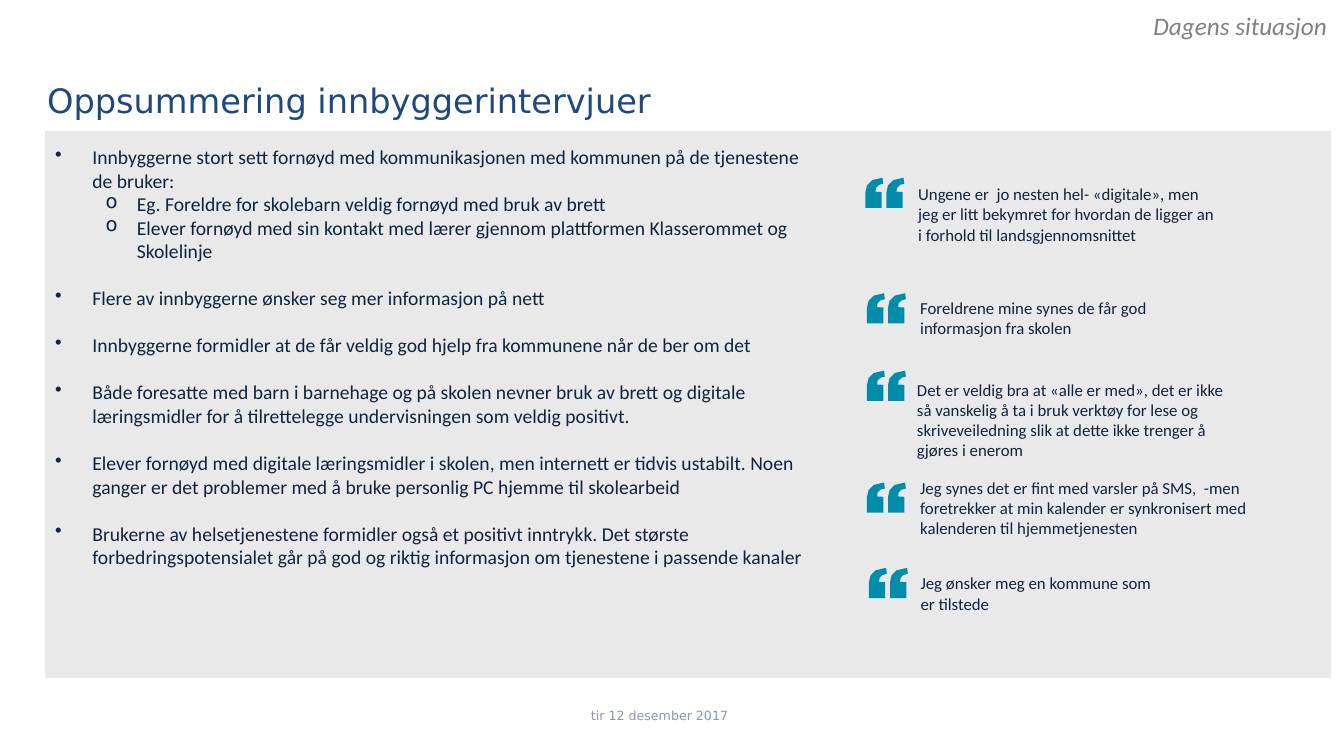
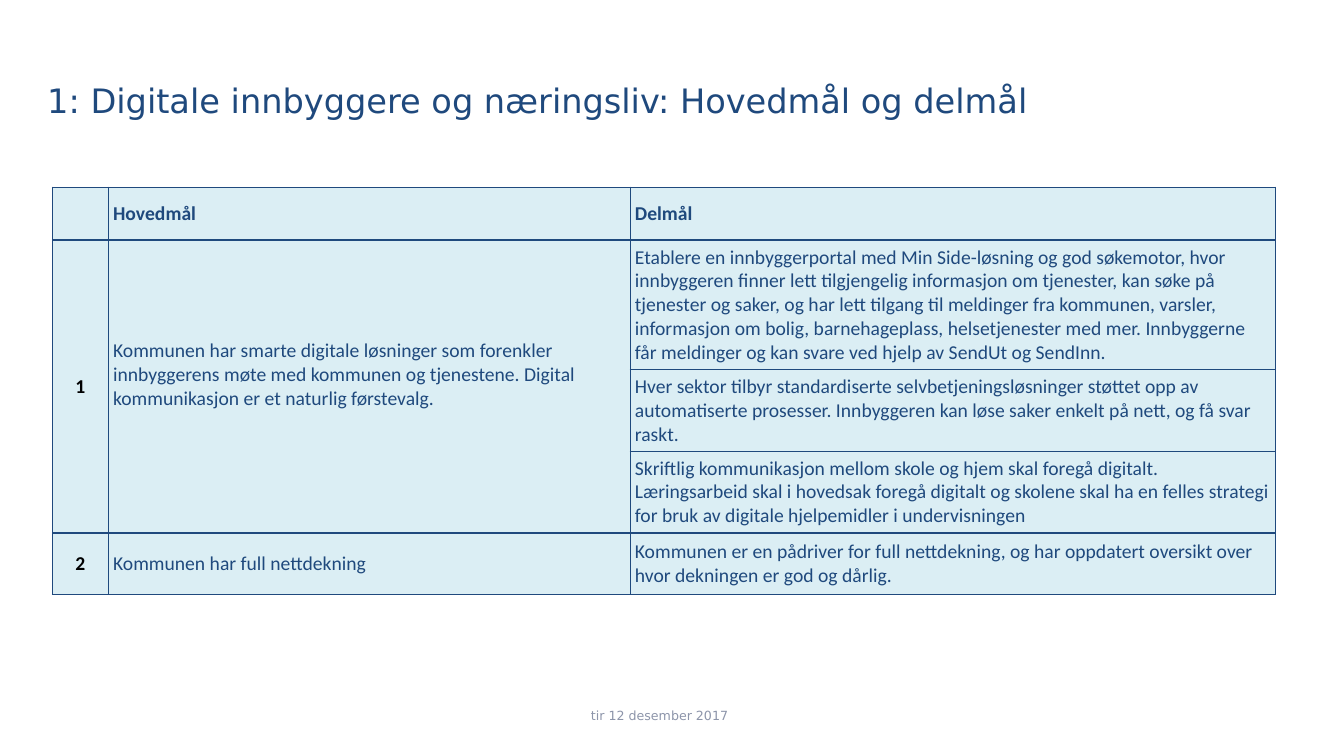
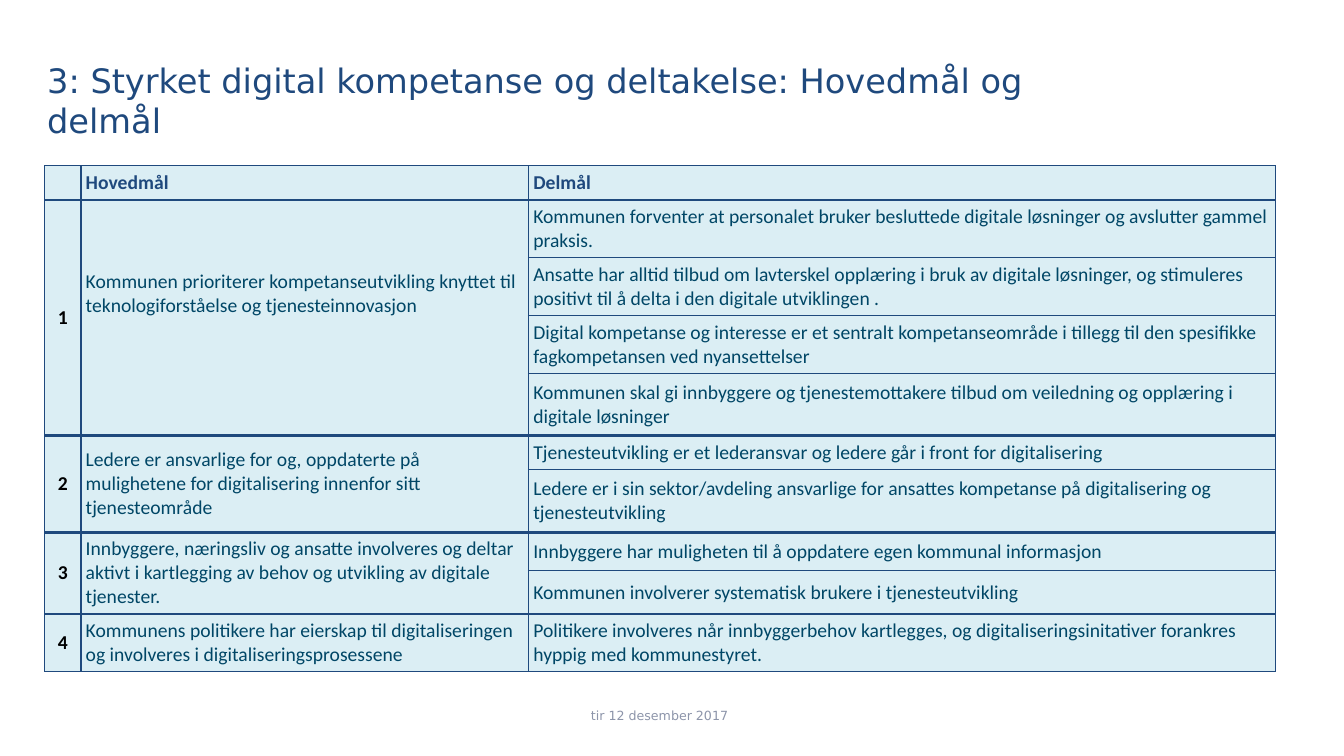
from lxml import etree
from pptx import Presentation
from pptx.dml.color import RGBColor
from pptx.enum import shapes, text
from pptx.oxml.ns import qn
from pptx.util import Cm, Pt

# Shared style
BODY_FONT, TITLE_FONT = "Calibri", "DejaVu Sans"
NAVY, INK, TEAL, PETROL = "1F497D", "0F243E", "008DAA", "004666"
ICE, GREY, PANEL, FOOTER, BLACK = "DBEEF4", "808080", "A6A6A6", "8D95AA", "000000"
FOOTER_TEXT = "tir 12 desember 2017"
MIDDLE, CENTER = text.MSO_ANCHOR.MIDDLE, text.PP_ALIGN.CENTER
CELL_MARGIN = 0.12
THIN, THICK = 1, 2.25
GAP = 16.8

# Slide 1: (level, text, space after in points)
SUMMARY = [
    (0, "Innbyggerne stort sett fornøyd med kommunikasjonen med kommunen på de tjenestene de bruker:", 0),
    (1, "Eg. Foreldre for skolebarn veldig fornøyd med bruk av brett", 0),
    (1, "Elever fornøyd med sin kontakt med lærer gjennom plattformen Klasserommet og Skolelinje", GAP),
    (0, "Flere av innbyggerne ønsker seg mer informasjon på nett", GAP),
    (0, "Innbyggerne formidler at de får veldig god hjelp fra kommunene når de ber om det", GAP),
    (0, "Både foresatte med barn i barnehage og på skolen nevner bruk av brett og digitale "
        "læringsmidler for å tilrettelegge undervisningen som veldig positivt.", GAP),
    (0, "Elever fornøyd med digitale læringsmidler i skolen, men internett er tidvis ustabilt. Noen "
        "ganger er det problemer med å bruke personlig PC hjemme til skolearbeid", GAP),
    (0, "Brukerne av helsetjenestene formidler også et positivt inntrykk. Det største "
        "forbedringspotensialet går på god og riktig informasjon om tjenestene i passende kanaler", 0),
]
# Level: (bullet, left margin, hanging indent)
BULLETS = [("•", 0.94, 0.94), ("o", 2.06, 0.79)]

# (mark left, mark top, text left, text top, text width, text)
QUOTES = [
    (21.81, 4.48, 22.89, 4.51, 8.15, "Ungene er  jo nesten hel- «digitale», men jeg er litt bekymret "
     "for hvordan de ligger an i forhold til landsgjennomsnittet"),
    (21.85, 7.39, 22.94, 7.37, 6.4, "Foreldrene mine synes de får god informasjon fra skolen"),
    (21.85, 9.34, 22.86, 9.44, 8.48, "Det er veldig bra at «alle er med», det er ikke så vanskelig å ta i "
     "bruk verktøy for lese og skriveveiledning slik at dette ikke trenger å gjøres i enerom"),
    (21.85, 12.16, 22.94, 11.91, 9.04, "Jeg synes det er fint med varsler på SMS,  -men foretrekker at min "
     "kalender er synkronisert med kalenderen til hjemmetjenesten"),
    (21.9, 14.31, 22.95, 14.32, 6.6, "Jeg ønsker meg en kommune som er tilstede"),
]

# Slides 2 and 3: each goal is (main goal, lift of its text in cm, sub-goals)
HEADINGS = ("", "Hovedmål", "Delmål")
GOAL_SLIDES = [
    dict(title="1: Digitale innbyggere og næringsliv: Hovedmål og delmål",
         left=1.32, top=4.72, cols=[1.41, 13.15, 16.27], color=NAVY, divider=THIN,
         rows=[1.33, 3.27, 2.06, 2.05, 1.55],
         goals=[
             ("Kommunen har smarte digitale løsninger som forenkler innbyggerens møte med kommunen og "
              "tjenestene. Digital kommunikasjon er et naturlig førstevalg.", 0.6,
              ["Etablere en innbyggerportal med Min Side-løsning og god søkemotor, hvor innbyggeren finner "
               "lett tilgjengelig informasjon om tjenester, kan søke på tjenester og saker, og har lett "
               "tilgang til meldinger fra kommunen, varsler, informasjon om bolig, barnehageplass, "
               "helsetjenester med mer. Innbyggerne får meldinger og kan svare ved hjelp av SendUt og SendInn.",
               "Hver sektor tilbyr standardiserte selvbetjeningsløsninger støttet opp av automatiserte "
               "prosesser. Innbyggeren kan løse saker enkelt på nett, og få svar raskt.",
               "Skriftlig kommunikasjon mellom skole og hjem skal foregå digitalt. Læringsarbeid skal i "
               "hovedsak foregå digitalt og skolene skal ha en felles strategi for bruk av digitale "
               "hjelpemidler i undervisningen"]),
             ("Kommunen har full nettdekning", 0,
              ["Kommunen er en pådriver for full nettdekning, og har oppdatert oversikt over hvor dekningen "
               "er god og dårlig."]),
         ]),
    dict(title="3: Styrket digital kompetanse og deltakelse: Hovedmål og delmål",
         left=1.13, top=4.18, cols=[0.91, 11.28, 18.82], color=PETROL, divider=THICK,
         rows=[0.86, 1.45, 1.46, 1.46, 1.57, 0.86, 1.57, 0.97, 1.09, 1.46],
         goals=[
             ("Kommunen prioriterer kompetanseutvikling knyttet til teknologiforståelse og "
              "tjenesteinnovasjon", 1.2,
              ["Kommunen forventer at personalet bruker besluttede digitale løsninger og avslutter gammel "
               "praksis.",
               "Ansatte har alltid tilbud om lavterskel opplæring i bruk av digitale løsninger, og "
               "stimuleres positivt til å delta i den digitale utviklingen .",
               "Digital kompetanse og interesse er et sentralt kompetanseområde i tillegg til den "
               "spesifikke fagkompetansen ved nyansettelser",
               "Kommunen skal gi innbyggere og tjenestemottakere tilbud om veiledning og opplæring i "
               "digitale løsninger"]),
             ("Ledere er ansvarlige for og, oppdaterte på mulighetene for digitalisering innenfor sitt "
              "tjenesteområde", 0,
              ["Tjenesteutvikling er et lederansvar og ledere går i front for digitalisering",
               "Ledere er i sin sektor/avdeling ansvarlige for ansattes kompetanse på digitalisering og "
               "tjenesteutvikling"]),
             ("Innbyggere, næringsliv og ansatte involveres og deltar aktivt i kartlegging av behov og "
              "utvikling av digitale tjenester.", 0,
              ["Innbyggere har muligheten til å oppdatere egen kommunal informasjon",
               "Kommunen involverer systematisk brukere i tjenesteutvikling"]),
             ("Kommunens politikere har eierskap til digitaliseringen og involveres i "
              "digitaliseringsprosessene", 0,
              ["Politikere involveres når innbyggerbehov kartlegges, og digitaliseringsinitativer forankres "
               "hyppig med kommunestyret."]),
         ]),
]


def rgb(color):
    return RGBColor.from_string(color)


def style(p, size, color, font=BODY_FONT, **flags):
    for r in p.runs:
        r.font.size, r.font.name, r.font.color.rgb = Pt(size), font, rgb(color)
        for name, value in flags.items():
            setattr(r.font, name, value)


def set_end_size(p, size):
    """Size of the paragraph mark, which bullets and empty cells follow."""
    etree.SubElement(p._p, qn("a:endParaRPr"), sz=str(size * 100))


def add_text(s, box, content, size, color, font=BODY_FONT, anchor=None, align=None, wrap=True, **flags):
    tf = s.shapes.add_textbox(*map(Cm, box)).text_frame
    tf.word_wrap = wrap
    tf.vertical_anchor = anchor
    p = tf.paragraphs[0]
    p.text, p.alignment = content, align
    style(p, size, color, font, **flags)


def add_slide(prs, title):
    s = prs.slides.add_slide(prs.slide_layouts[6])
    add_text(s, (0.94, 0.93, 25.63, 3.18), title, 24, NAVY, TITLE_FONT, MIDDLE)
    add_text(s, (12.67, 17.53, 7.9, 1.02), FOOTER_TEXT, 9, FOOTER, TITLE_FONT, MIDDLE, CENTER)
    return s


def paint(sp, color):
    sp.shadow.inherit = False
    sp.fill.solid()
    sp.fill.fore_color.rgb = rgb(color)
    sp.line.fill.background()


# Slide 1 parts
def add_panel(s):
    sp = s.shapes.add_shape(shapes.MSO_SHAPE.RECTANGLE, Cm(1.14), Cm(3.3), Cm(32.41), Cm(13.79))
    paint(sp, PANEL)
    clr = sp.fill._xPr.find(".//" + qn("a:srgbClr"))
    etree.SubElement(clr, qn("a:alpha"), val="24000")


def add_summary(s):
    tf = s.shapes.add_textbox(Cm(1.14), Cm(3.53), Cm(19.61), Cm(13.34)).text_frame
    tf.word_wrap = True
    for i, (level, content, after) in enumerate(SUMMARY):
        p = tf.paragraphs[0] if i == 0 else tf.add_paragraph()
        p.text, p.level, p.space_after = content, level, Pt(after)
        char, margin, hang = BULLETS[level]
        pPr = p._p.get_or_add_pPr()
        pPr.set("marL", str(Cm(margin)))
        pPr.set("indent", str(-Cm(hang)))
        etree.SubElement(pPr, qn("a:buChar"), char=char)
        style(p, 14, INK)
        set_end_size(p, 14)


def curve(p0, p1, p2, p3, steps=3):
    """Points along a cubic curve, without its start."""
    for t in (k / steps for k in range(1, steps + 1)):
        yield tuple((1 - t) ** 3 * a + 3 * (1 - t) ** 2 * t * b + 3 * (1 - t) * t ** 2 * c + t ** 3 * d
                    for a, b, c, d in zip(p0, p1, p2, p3))


# One quotation mark, in hundredths of a centimetre
MARK = [(43, 0), (45, 15),
        *curve((45, 15), (31, 15), (25, 25), (25, 35)),
        (41, 36), (41, 76), (0, 76), (0, 36),
        *curve((0, 36), (2, 18), (8, 1), (43, 0))]
MARK_STEP = 0.53


def add_quote_marks(s, left, top):
    for x in (left, left + MARK_STEP):
        fb = s.shapes.build_freeform(*MARK[0], scale=Cm(0.01))
        fb.add_line_segments(MARK[1:-1], close=True)
        paint(fb.convert_to_shape(Cm(x), Cm(top)), TEAL)


# Goal tables
def set_borders(cell, top, bottom):
    tcPr = cell._tc.get_or_add_tcPr()
    for side, width in (("L", THIN), ("R", THIN), ("T", top), ("B", bottom)):
        ln = etree.SubElement(tcPr, qn("a:ln" + side), w=str(Pt(width)))
        fill = etree.SubElement(ln, qn("a:solidFill"))
        etree.SubElement(fill, qn("a:srgbClr"), val=NAVY)


def fill_cell(cell, content, color, bold=False, align=None, lift=0):
    cell.margin_left = cell.margin_right = cell.margin_top = Cm(CELL_MARGIN)
    cell.margin_bottom = Cm(CELL_MARGIN + lift)
    cell.vertical_anchor = MIDDLE
    p = cell.text_frame.paragraphs[0]
    p.text, p.alignment = content, align
    style(p, 14, color, bold=bold)


def add_goal_table(s, left, top, cols, rows, color, divider, goals):
    size = (len(rows), len(cols))
    tbl = s.shapes.add_table(*size, Cm(left), Cm(top), Cm(sum(cols)), Cm(sum(rows))).table
    tbl.first_row = tbl.horz_banding = False
    for col, width in zip(tbl.columns, cols):
        col.width = Cm(width)
    for row, height in zip(tbl.rows, rows):
        row.height = Cm(height)

    for c, heading in enumerate(HEADINGS):
        fill_cell(tbl.cell(0, c), heading, NAVY, bold=True)
    first, starts = 1, set()
    for number, (goal, lift, subgoals) in enumerate(goals, 1):
        starts.add(first)
        last = first + len(subgoals) - 1
        fill_cell(tbl.cell(first, 0), str(number), BLACK, True, CENTER)
        fill_cell(tbl.cell(first, 1), goal, color, lift=lift)
        for i, subgoal in enumerate(subgoals):
            fill_cell(tbl.cell(first + i, 2), subgoal, color)
        if last > first:
            for c in (0, 1):
                tbl.cell(first, c).merge(tbl.cell(last, c))
        first = last + 1

    # Heavier rules part the goals
    for r in range(size[0]):
        for c in range(size[1]):
            cell = tbl.cell(r, c)
            set_borders(cell, *(divider if edge in starts else THIN for edge in (r, r + 1)))
            cell.fill.solid()
            cell.fill.fore_color.rgb = rgb(ICE)
            p = cell.text_frame.paragraphs[0]
            if not p.runs:
                set_end_size(p, 14)


def main():
    prs = Presentation()
    prs.slide_width, prs.slide_height = Cm(33.87), Cm(19.05)

    s = add_slide(prs, "Oppsummering innbyggerintervjuer")
    add_panel(s)
    add_summary(s)
    for mark_left, mark_top, left, top, width, quote in QUOTES:
        add_quote_marks(s, mark_left, mark_top)
        add_text(s, (left, top, width, 1.27), quote, 12, INK)
    add_text(s, (28.82, 0.13, 4.93, 1.02), "Dagens situasjon", 18, GREY, wrap=False, italic=True)

    for goal_slide in GOAL_SLIDES:
        layout = dict(goal_slide)
        add_goal_table(add_slide(prs, layout.pop("title")), **layout)
    prs.save("out.pptx")


if __name__ == "__main__":
    main()
